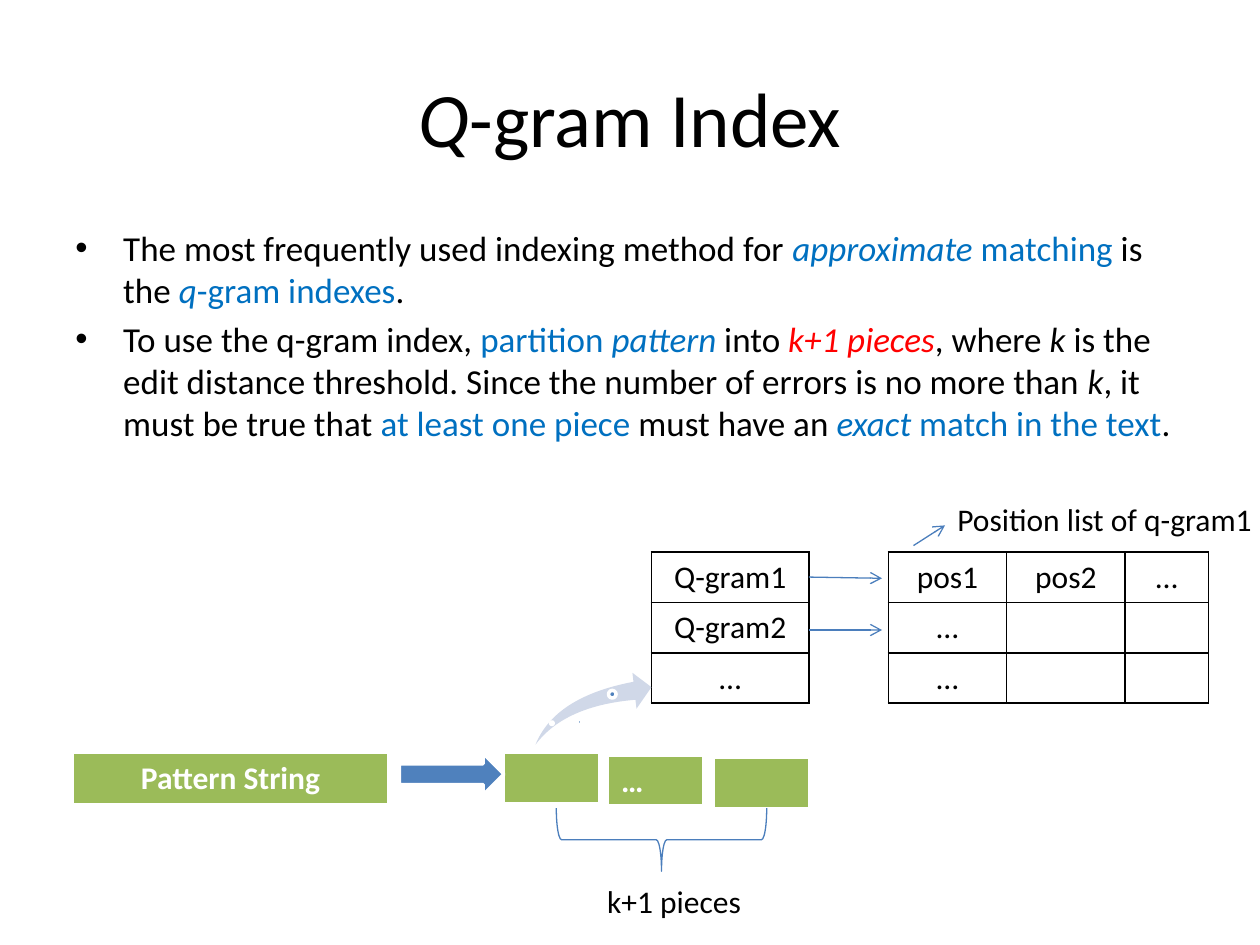
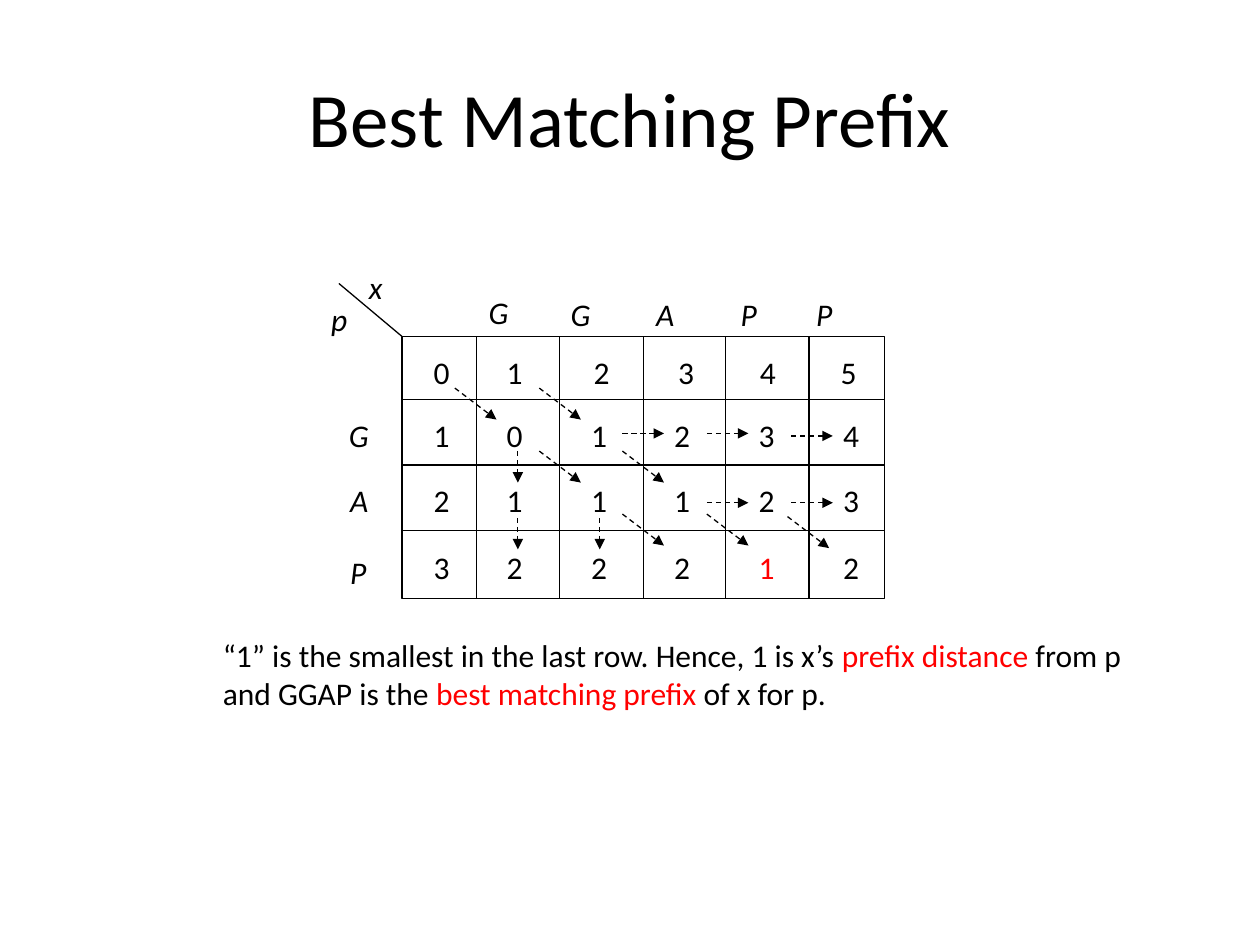
"""Build two slides on q-gram indexing and best matching prefixes."""
from dataclasses import dataclass
from typing import Optional, Sequence

from lxml import etree
from pptx import Presentation
from pptx.dml.color import RGBColor
from pptx.enum.dml import MSO_LINE
from pptx.enum.shapes import MSO_CONNECTOR, MSO_SHAPE
from pptx.enum.text import MSO_ANCHOR, PP_ALIGN
from pptx.oxml.ns import qn
from pptx.util import Pt

PX = 9144
FONT = "Calibri"
BLACK = RGBColor(0x00, 0x00, 0x00)
WHITE = RGBColor(0xFF, 0xFF, 0xFF)
RED = RGBColor(0xFF, 0x00, 0x00)
BLUE = RGBColor(0x00, 0x70, 0xC0)
GREEN = RGBColor(0x9B, 0xBB, 0x59)
STEEL = RGBColor(0x4F, 0x81, 0xBD)
STEEL_LINE = RGBColor(0x4B, 0x7E, 0xBC)
PALE = RGBColor(0xD0, 0xD8, 0xE8)

LEFT, CENTER = PP_ALIGN.LEFT, PP_ALIGN.CENTER
TOP, MIDDLE = MSO_ANCHOR.TOP, MSO_ANCHOR.MIDDLE
STRAIGHT, DASH = MSO_CONNECTOR.STRAIGHT, MSO_LINE.DASH
RECTANGLE, ELLIPSE = MSO_SHAPE.RECTANGLE, MSO_SHAPE.OVAL
RIGHT_ARROW, SWOOSH = MSO_SHAPE.RIGHT_ARROW, MSO_SHAPE.SWOOSH_ARROW
RIGHT_BRACE = MSO_SHAPE.RIGHT_BRACE


@dataclass(frozen=True)
class Span:
    """A stretch of text in one style."""
    text: str
    color: RGBColor = BLACK
    italic: bool = False
    bold: bool = False


@dataclass(frozen=True)
class Area:
    """A rectangle in px."""
    left: int
    top: int
    width: int
    height: int

    def emu(self) -> tuple:
        """Return the four lengths in EMU."""
        return tuple(PX * size for size in (self.left, self.top, self.width, self.height))


@dataclass(frozen=True)
class Stroke:
    """A line style, with an optional arrowhead."""
    color: RGBColor
    width: float = 0.75
    head: str = ""
    dashed: bool = False


@dataclass(frozen=True)
class Figure:
    """A preset shape with its fill and outline."""
    kind: int
    area: Area
    fill: Optional[RGBColor] = None
    stroke: Optional[Stroke] = None
    rotation: int = 0
    adjustments: tuple = ()


PLAIN = Stroke(BLACK)
STEP = Stroke(BLACK, head="triangle", dashed=True)
POINTER = Stroke(STEEL_LINE, head="arrow")
RIM = Stroke(WHITE, 2)
CELL_LINE = Stroke(BLACK, 1)
WHITE_LINE = Stroke(WHITE, 1)
WHITE_BASE = Stroke(WHITE, 3)

BULLETS = (
    (
        Span("The most frequently used indexing method for "),
        Span("approximate", BLUE, True), Span(" matching", BLUE),
        Span(" is the "), Span("q", BLUE, True), Span("-gram indexes", BLUE), Span("."),
    ),
    (
        Span("To use the q-gram index, "), Span("partition ", BLUE),
        Span("pattern", BLUE, True), Span(" into "), Span("k+1 pieces", RED, True),
        Span(", where"), Span(" k ", italic=True),
        Span("is the edit distance threshold. Since the number of errors is no more than "),
        Span("k", italic=True), Span(", it must be true that "),
        Span("at least one piece ", BLUE), Span("must have an "),
        Span("exact", BLUE, True), Span(" match in the text", BLUE), Span("."),
    ),
)
INDEX_COLUMNS = (125, 63, 94, 94, 66)
INDEX_GAP = 1
INDEX_ROWS = (
    ("Q-gram1", "", "pos1", "pos2", "…"),
    ("Q-gram2", "", "…", "", ""),
    ("…", "", "…", "", ""),
)
INDEX_POINTERS = ((642, 458, 700, 459), (642, 500, 700, 500), (725, 433, 750, 417))
PIECES = (
    (Area(58, 598, 250, 41), "Pattern String", CENTER),
    (Area(400, 598, 75, 40), "", LEFT),
    (Area(483, 600, 75, 40), "…", LEFT),
    (Area(567, 602, 75, 40), "", LEFT),
)
INDEX_FIGURES = (
    Figure(RIGHT_ARROW, Area(317, 598, 83, 33), STEEL, RIM),
    Figure(SWOOSH, Area(425, 534, 92, 57), PALE, adjustments=(0.25, 0.25)),
    Figure(ELLIPSE, Area(437, 573, 2, 2), STEEL, RIM),
    Figure(ELLIPSE, Area(458, 571, 4, 4), STEEL, RIM),
    Figure(ELLIPSE, Area(483, 548, 6, 6), STEEL, RIM),
    Figure(RIGHT_BRACE, Area(500, 583, 50, 167), stroke=Stroke(STEEL_LINE), rotation=90),
)

MATRIX = Area(319, 267, 383, 208)
MATRIX_ROW_LINES = (317, 369, 421)
MATRIX_COLUMN_LINES = (378, 444, 511, 576, 642)
DISTANCES = ("012345", "101234", "211123", "322212")
ROW_TOPS = (275, 325, 377, 430)
FIRST_ROW_LEFTS = (317, 375, 444, 511, 576, 640)
INNER_LEFTS = (317, *(375 + round(column * 200 / 3) for column in range(5)))
BEST_CELL = (3, 4)
LETTERS = (
    ("p", 253, 233), ("x", 283, 208),
    ("G", 267, 325), ("A", 268, 377), ("P", 268, 434),
    ("G", 378, 228), ("G", 443, 229), ("A", 511, 229), ("P", 578, 229), ("P", 638, 229),
)
STEPS = {
    (33, 25): ((361, 308), (428, 308), (428, 358), (494, 358), (494, 408), (561, 408), (625, 410)),
    (33, 0): ((494, 344), (561, 344), (628, 346), (561, 399), (628, 399)),
    (0, 25): ((411, 358), (411, 411), (476, 411)),
}
CONCLUSION = (
    Span("“1” is the smallest in the last row. Hence, 1 is x’s "),
    Span("prefix distance ", RED), Span("from p and GGAP is the "),
    Span("best matching prefix", RED), Span(" of x for p."),
)


def write_spans(para, spans: Sequence[Span], size: int, align=LEFT) -> None:
    """Fill a paragraph with styled runs."""
    para.alignment = align
    for span in spans:
        run = para.add_run()
        run.text = span.text
        font = run.font
        font.name, font.size = FONT, Pt(size)
        font.italic, font.bold = span.italic, span.bold
        font.color.rgb = span.color


def add_text(slide, area: Area, spans: Sequence[Span], size: int = 18, align=LEFT, anchor=TOP):
    """Add a wrapping text box with one paragraph."""
    box = slide.shapes.add_textbox(*area.emu())
    frame = box.text_frame
    frame.word_wrap = True
    frame.vertical_anchor = anchor
    write_spans(frame.paragraphs[0], spans, size, align)
    return box


def add_title(slide, spans: Sequence[Span]) -> None:
    """Add the shared slide title."""
    add_text(slide, Area(50, 30, 900, 125), spans, 44, CENTER, MIDDLE)


def add_bullets(slide, area: Area, items: Sequence[Sequence[Span]], size: int) -> None:
    """Add a bulleted text box."""
    frame = add_text(slide, area, items[0], size).text_frame
    for spans in items[1:]:
        para = frame.add_paragraph()
        para.space_before = Pt(size * 0.2)
        write_spans(para, spans, size)
    for para in frame.paragraphs:
        properties = para._p.get_or_add_pPr()
        properties.set("marL", str(38 * PX))
        properties.set("indent", str(-38 * PX))
        etree.SubElement(properties, qn("a:buFont"), typeface="Arial")
        etree.SubElement(properties, qn("a:buChar"), char="•")


def add_line(slide, start_x: int, start_y: int, end_x: int, end_y: int, stroke: Stroke) -> None:
    """Add a straight line or arrow."""
    ends = (PX * value for value in (start_x, start_y, end_x, end_y))
    connector = slide.shapes.add_connector(STRAIGHT, *ends)
    connector.line.color.rgb = stroke.color
    connector.line.width = Pt(stroke.width)
    if stroke.dashed:
        connector.line.dash_style = DASH
    properties = connector._element.spPr
    if stroke.head:
        etree.SubElement(properties.find(qn("a:ln")), qn("a:tailEnd"), type=stroke.head)
    etree.SubElement(properties, qn("a:effectLst"))


def add_figure(slide, figure: Figure) -> None:
    """Add a preset shape."""
    shape = slide.shapes.add_shape(figure.kind, *figure.area.emu())
    shape.shadow.inherit = False
    shape.rotation = figure.rotation
    for index, value in enumerate(figure.adjustments):
        shape.adjustments[index] = value
    if figure.fill is None:
        shape.fill.background()
    else:
        shape.fill.solid()
        shape.fill.fore_color.rgb = figure.fill
    if figure.stroke is None:
        shape.line.fill.background()
    else:
        shape.line.color.rgb = figure.stroke.color
        shape.line.width = Pt(figure.stroke.width)


def set_borders(cell, strokes: Sequence[Optional[Stroke]]) -> None:
    """Set the left, right, top and bottom borders of a cell."""
    properties = cell._tc.get_or_add_tcPr()
    for index, (side, stroke) in enumerate(zip("LRTB", strokes)):
        border = etree.Element(qn(f"a:ln{side}"))
        properties.insert(index, border)
        if stroke is None:
            etree.SubElement(border, qn("a:noFill"))
            continue
        border.set("w", str(Pt(stroke.width)))
        fill = etree.SubElement(border, qn("a:solidFill"))
        etree.SubElement(fill, qn("a:srgbClr"), val=str(stroke.color))


def add_table(slide, area: Area, rows: int, widths: Sequence[int]):
    """Add an unbanded table with equal row heights."""
    table = slide.shapes.add_table(rows, len(widths), *area.emu()).table
    table.first_row = table.horz_banding = False
    for column, width in zip(table.columns, widths):
        column.width = width * PX
    for row in table.rows:
        row.height = area.height * PX // rows
    return table


def add_index_table(slide) -> None:
    """Add the q-gram table beside its position lists."""
    area = Area(517, 438, sum(INDEX_COLUMNS), 120)
    table = add_table(slide, area, len(INDEX_ROWS), INDEX_COLUMNS)
    for row, texts in enumerate(INDEX_ROWS):
        for column, text in enumerate(texts):
            cell = table.cell(row, column)
            cell.fill.background()
            level = None if column == INDEX_GAP else CELL_LINE
            set_borders(cell, (CELL_LINE, CELL_LINE, level, level))
            if text:
                write_spans(cell.text_frame.paragraphs[0], (Span(text),), 18, CENTER)


def add_piece(slide, area: Area, text: str, align) -> None:
    """Add a green one-cell table for a part of the pattern."""
    cell = add_table(slide, area, 1, (area.width,)).cell(0, 0)
    cell.fill.solid()
    cell.fill.fore_color.rgb = GREEN
    set_borders(cell, (WHITE_LINE, WHITE_LINE, WHITE_LINE, WHITE_BASE))
    if text:
        write_spans(cell.text_frame.paragraphs[0], (Span(text, WHITE, bold=True),), 18, align)


def build_index_slide(slide) -> None:
    """Draw the q-gram index slide."""
    add_title(slide, (Span("Q", italic=True), Span("-gram Index")))
    add_bullets(slide, Area(50, 175, 900, 495), BULLETS, 20)
    add_index_table(slide)
    add_text(slide, Area(750, 392, 267, 40), (Span("Position list of q-gram1"),))
    for ends in INDEX_POINTERS:
        add_line(slide, *ends, POINTER)
    for area, text, align in PIECES:
        add_piece(slide, area, text, align)
    for figure in INDEX_FIGURES:
        add_figure(slide, figure)
    add_text(slide, Area(472, 695, 169, 40), (Span("k+1 pieces"),))


def build_prefix_slide(slide) -> None:
    """Draw the best matching prefix slide."""
    add_title(slide, (Span("Best Matching Prefix"),))
    add_figure(slide, Figure(RECTANGLE, MATRIX, stroke=PLAIN))
    add_line(slide, 269, 225, MATRIX.left, MATRIX.top, PLAIN)
    for y in MATRIX_ROW_LINES:
        add_line(slide, MATRIX.left, y, MATRIX.left + MATRIX.width, y, PLAIN)
    for x in MATRIX_COLUMN_LINES:
        add_line(slide, x, MATRIX.top, x, MATRIX.top + MATRIX.height, PLAIN)
    for letter, left, top in LETTERS:
        add_text(slide, Area(left, top, 67, 40), (Span(letter, italic=True),))
    for row, (digits, top) in enumerate(zip(DISTANCES, ROW_TOPS)):
        lefts = INNER_LEFTS if row else FIRST_ROW_LEFTS
        for column, (digit, left) in enumerate(zip(digits, lefts)):
            color = RED if (row, column) == BEST_CELL else BLACK
            add_text(slide, Area(left, top, 67, 40), (Span(digit, color),), align=CENTER)
    for (across, down), starts in STEPS.items():
        for x, y in starts:
            add_line(slide, x, y, x + across, y + down, STEP)
    add_text(slide, Area(167, 500, 742, 101), CONCLUSION)


def main() -> None:
    """Build and save the deck."""
    deck = Presentation()
    deck.slide_width, deck.slide_height = 1000 * PX, 750 * PX
    for build in (build_index_slide, build_prefix_slide):
        build(deck.slides.add_slide(deck.slide_layouts[6]))
    deck.save("out.pptx")


if __name__ == "__main__":
    main()
